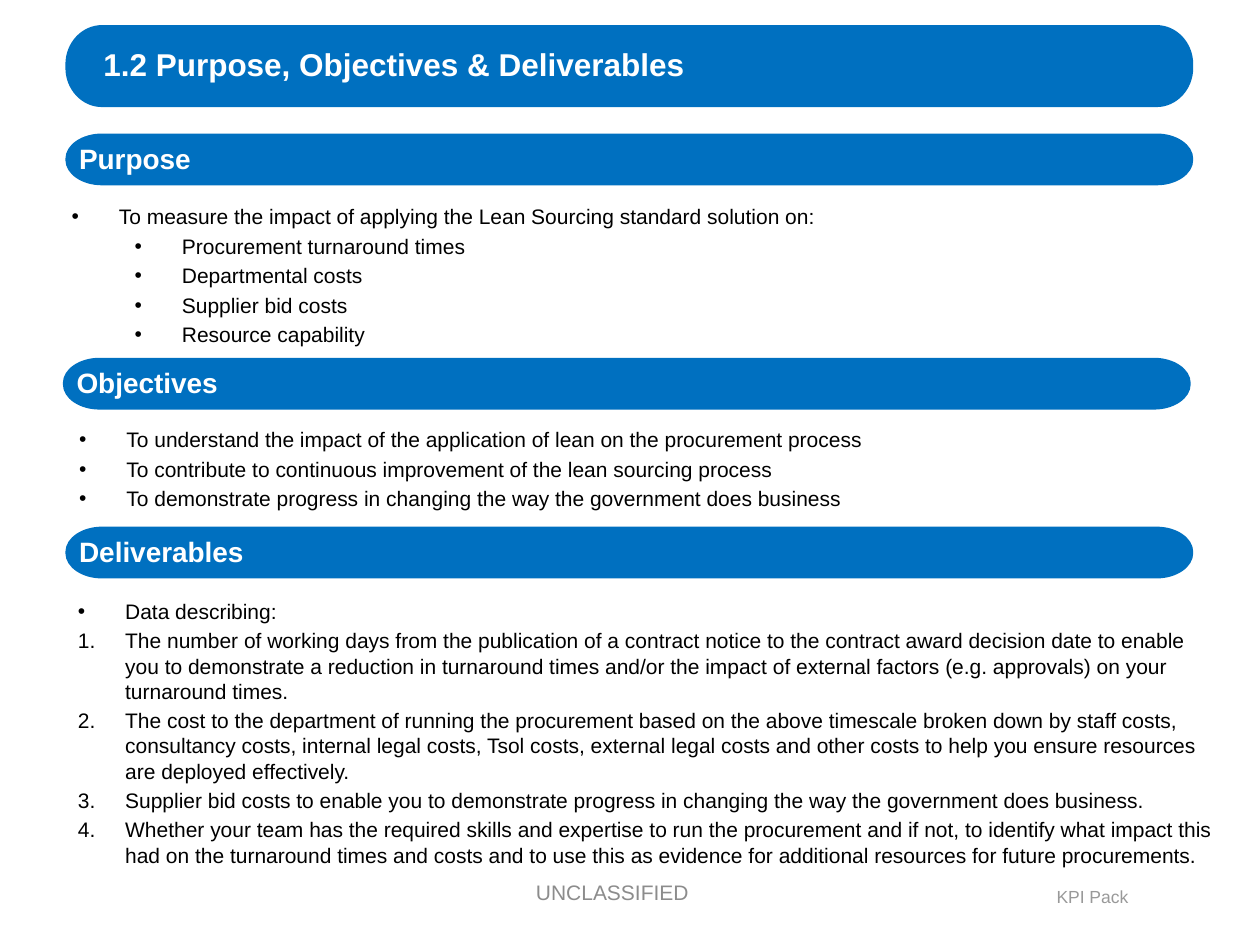
from lxml.etree import SubElement as Sub
from pptx import Presentation
from pptx.dml.color import RGBColor as Rgb
from pptx.enum.text import MSO_ANCHOR as Anchor, MSO_AUTO_SIZE as Fit, PP_ALIGN as Align
from pptx.oxml.ns import qn
from pptx.util import Inches as In, Pt

FONT = "Arial"
HEX = {"blue": "0070C0", "white": "FFFFFF", "black": "000000",
       "grey": "8C8C8C", "pale": "999999"}
LEFT, WIDE, HIGH = 0.53, 8.93, 0.39   # bars
LIST = 9.22                           # list width
HANG, STEP = 3 / 8, 1 / 2             # list indents
BEND = 0.55                           # pull of a quarter ellipse

# Each section: bar left and top, heading, list left and top, height, items.
# Each item: level, mark, text.
PARTS = [
    (LEFT, 1.07, "Purpose", 0.47, 1.57, 1.53, [
        (0, "•", "To measure the impact of applying the Lean Sourcing standard solution on:"),
        (1, "•", "Procurement turnaround times"),
        (1, "•", "Departmental costs"),
        (1, "•", "Supplier bid costs"),
        (1, "•", "Resource capability")]),
    (0.51, 2.85, "Objectives", 0.53, 3.34, 0.94, [
        (0, "•", "To understand the impact of the application of lean on the procurement process"),
        (0, "•", "To contribute to continuous improvement of the lean sourcing process"),
        (0, "•", "To demonstrate progress in changing the way the government does business")]),
    (LEFT, 4.19, "Deliverables", 0.52, 4.7, 1.42, [
        (0, "•", "Data describing:"),
        (0, "1", "The number of working days from the publication of a contract notice to the "
                 "contract award decision date to enable you to demonstrate a reduction in "
                 "turnaround times and/or the impact of external factors (e.g. approvals) on "
                 "your turnaround times."),
        (0, "1", "The cost to the department of running the procurement based on the above "
                 "timescale broken down by staff costs, consultancy costs, internal legal costs, "
                 "Tsol costs, external legal costs and other costs to help you ensure resources "
                 "are deployed effectively."),
        (0, "1", "Supplier bid costs to enable you to demonstrate progress in changing the way "
                 "the government does business."),
        (0, "1", "Whether your team has the required skills and expertise to run the procurement "
                 "and if not, to identify what impact this had on the turnaround times and costs "
                 "and to use this as evidence for additional resources for future procurements.")]),
]


def write(para, text, size=12, color="black", bold=False, align=Align.LEFT):
    """Put one formatted run into a paragraph."""
    para.alignment = align
    run = para.add_run()
    run.text = text
    font = run.font
    font.name, font.size, font.bold = FONT, Pt(size), bold
    font.color.rgb = Rgb.from_string(HEX[color])


def add_box(slide, x, y, w, h, anchor=Anchor.TOP):
    """Add a wrapping text box and return its frame."""
    frame = slide.shapes.add_textbox(In(x), In(y), In(w), In(h)).text_frame
    frame.word_wrap = True
    frame.vertical_anchor = anchor
    return frame


def round_off(bar):
    """Turn every second line of an outline into a quarter ellipse."""
    dots = list(bar._element.iter(qn("a:pt")))
    spots = [(int(d.get("x")), int(d.get("y"))) for d in dots]
    for i in range(0, 8, 2):
        a, b = spots[i], spots[i + 1]
        tip = (b[0], a[1]) if i % 4 == 0 else (a[0], b[1])
        line = dots[i + 1].getparent()
        curve = line.makeelement(qn("a:cubicBezTo"))
        line.getparent().replace(line, curve)
        pulls = [[round(p + BEND * (t - p)) for p, t in zip(end, tip)] for end in (a, b)]
        for x, y in (*pulls, b):
            dot = Sub(curve, qn("a:pt"))
            dot.set("x", str(x))
            dot.set("y", str(y))


def add_bar(slide, x, y, h, rx=0.28, ry=0.19):
    """Add a bar with elliptical corners."""
    r, b = x + WIDE, y + h
    dots = [(x + rx, y), (x, y + ry), (x, b - ry), (x + rx, b),
            (r - rx, b), (r, b - ry), (r, y + ry), (r - rx, y)]
    dots = [(In(p), In(q)) for p, q in dots]
    pen = slide.shapes.build_freeform(*dots[0])
    pen.add_line_segments(dots[1:] + dots[:1], close=True)
    bar = pen.convert_to_shape()
    round_off(bar)
    bar.shadow.inherit = False
    bar.fill.solid()
    bar.fill.fore_color.rgb = bar.line.color.rgb = Rgb.from_string(HEX["blue"])
    bar.line.width = Pt(1.5)
    return bar


def add_mark(para, level, mark):
    """Give a paragraph its hanging indent and a bullet or number."""
    para.level = level
    para.space_before = Pt(2.4)
    props = para._p.get_or_add_pPr()
    props.set("marL", str(In(HANG + STEP * level)))
    props.set("indent", str(-In(HANG)))
    Sub(props, qn("a:buFont")).set("typeface", FONT)
    if mark == "1":
        Sub(props, qn("a:buAutoNum")).set("type", "arabicPeriod")
    else:
        Sub(props, qn("a:buChar")).set("char", mark)


def add_list(slide, x, y, h, items):
    frame = add_box(slide, x, y, LIST, h)
    for i, (level, mark, text) in enumerate(items):
        para = frame.add_paragraph() if i else frame.paragraphs[0]
        add_mark(para, level, mark)
        write(para, text)


def add_title(slide, text):
    """Place the title in front of its banner."""
    title = slide.shapes.title
    slide.shapes._spTree.append(title._element)
    title.left, title.top, title.width, title.height = In(0.72), In(0.27), In(8.53), In(0.48)
    frame = title.text_frame
    frame.auto_size = Fit.NONE
    frame.vertical_anchor = Anchor.MIDDLE
    write(frame.paragraphs[0], text, size=18, color="white", bold=True)


def main():
    deck = Presentation()
    deck.slide_width, deck.slide_height = In(10), In(7.5)
    slide = deck.slides.add_slide(deck.slide_layouts[5])

    # Banner, pack name and title
    add_bar(slide, LEFT, 0.21, 0.63, ry=0.3)
    pack = add_box(slide, 7.34, 6.98, 2.66, 0.27)
    write(pack.paragraphs[0], "KPI Pack", size=10, color="pale", align=Align.CENTER)
    add_title(slide, "1.2 Purpose, Objectives & Deliverables")

    # Sections
    for x, y, head, left, top, high, items in PARTS:
        frame = add_bar(slide, x, y, HIGH).text_frame
        frame.vertical_anchor = Anchor.TOP
        write(frame.paragraphs[0], head, size=16, color="white", bold=True)
        add_list(slide, left, top, high, items)

    # Marking
    mark = add_box(slide, 3.47, 6.94, 2.78, 0.28, Anchor.MIDDLE)
    write(mark.paragraphs[0], "UNCLASSIFIED", color="grey", align=Align.CENTER)

    deck.save("out.pptx")


if __name__ == "__main__":
    main()
